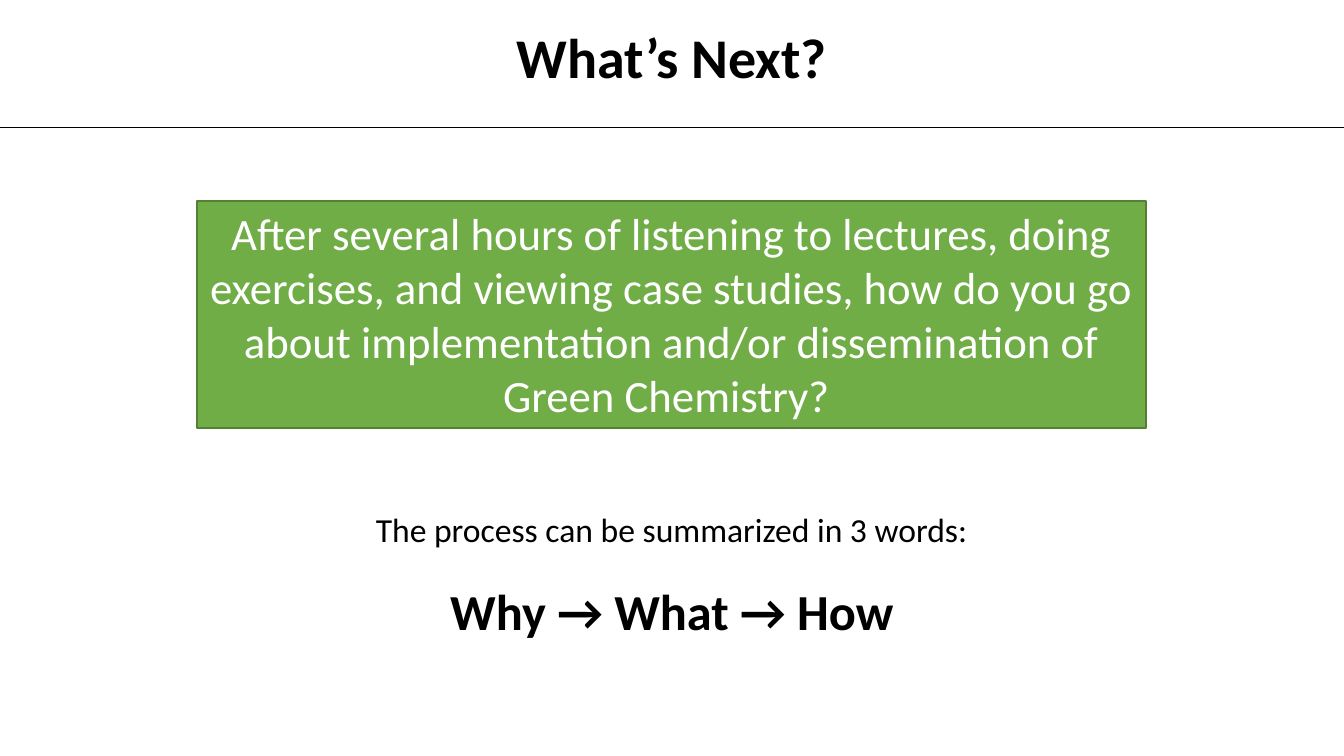
from lxml.etree import SubElement
from pptx import Presentation
from pptx.dml.color import RGBColor
from pptx.enum.shapes import MSO_CONNECTOR, MSO_SHAPE
from pptx.enum.text import MSO_ANCHOR, MSO_AUTO_SIZE, PP_ALIGN
from pptx.oxml.ns import qn
from pptx.util import Pt

PX = 9144000 // 1008
WIDTH, HEIGHT = 1344, 756


def color(hex_code):
    return RGBColor.from_string(hex_code)


def write(shape, text, size, ink="000000", bold=False, wrap=True,
          anchor=MSO_ANCHOR.TOP, fit=MSO_AUTO_SIZE.NONE, spacing=1.0, before=0):
    frame = shape.text_frame
    frame.text = text
    frame.word_wrap = wrap
    frame.auto_size = fit
    frame.vertical_anchor = anchor
    paragraph = frame.paragraphs[0]
    paragraph.alignment = PP_ALIGN.CENTER
    paragraph.line_spacing = spacing
    paragraph.space_before = Pt(before)
    font = paragraph.runs[0].font
    font.name = "Calibri"
    font.size = Pt(size)
    font.bold = bold
    font.color.rgb = color(ink)
    return paragraph


deck = Presentation()
deck.slide_width, deck.slide_height = WIDTH * PX, HEIGHT * PX
slide = deck.slides.add_slide(deck.slide_layouts[1])
heading, three_words = slide.placeholders

for part, box in ((heading, (505, 17, 334, 78)), (three_words, (419, 582, 506, 64))):
    part.left, part.top, part.width, part.height = [length * PX for length in box]

write(heading, "What’s Next?", 40, bold=True, wrap=False)

summary = write(three_words, "Why → What → How", 36, bold=True, spacing=0.9, before=10)
summary_format = summary._p.get_or_add_pPr()
summary_format.set("marL", "0")
summary_format.set("indent", "0")
SubElement(summary_format, qn("a:buNone"))

question = slide.shapes.add_shape(
    MSO_SHAPE.RECTANGLE, 197 * PX, 201 * PX, 949 * PX, 227 * PX)
question.shadow.inherit = False
question.fill.solid()
question.fill.fore_color.rgb = color("70AD47")
question.line.color.rgb = color("538035")
question.line.width = Pt(1)
write(question,
      "After several hours of listening to lectures, doing exercises, and viewing "
      "case studies, how do you go about implementation and/or dissemination of "
      "Green Chemistry? ",
      32, ink="FFFFFF", fit=MSO_AUTO_SIZE.SHAPE_TO_FIT_TEXT)

lead_in = slide.shapes.add_textbox(363 * PX, 504 * PX, 617 * PX, 50 * PX)
write(lead_in, "The process can be summarized in 3 words:", 24, wrap=False,
      fit=MSO_AUTO_SIZE.SHAPE_TO_FIT_TEXT)

divider = slide.shapes.add_connector(
    MSO_CONNECTOR.STRAIGHT, 0, 127 * PX, WIDTH * PX, 127 * PX)
divider.line.color.rgb = color("000000")
divider.line.width = Pt(0.5)
SubElement(divider._element.spPr, qn("a:effectLst"))

deck.save("out.pptx")
